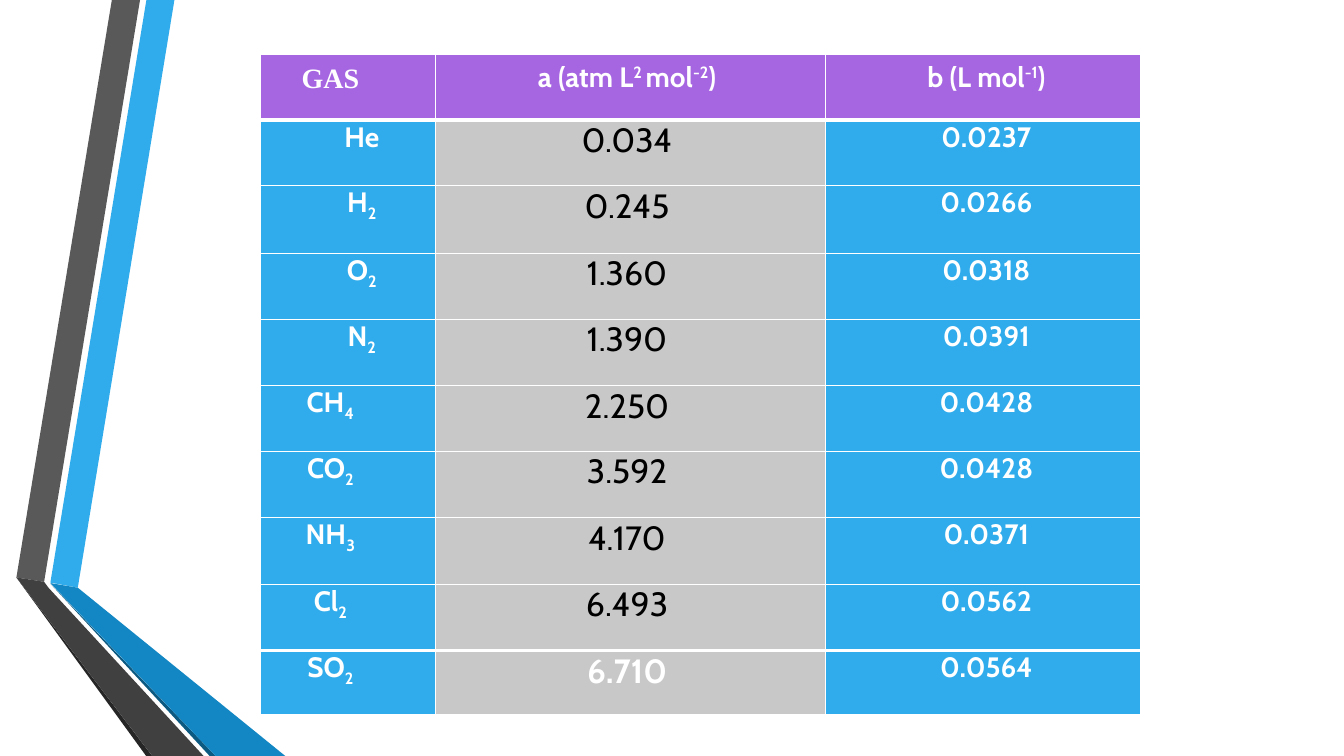
from lxml import etree
from pptx import Presentation
from pptx.dml.color import RGBColor
from pptx.enum.text import MSO_ANCHOR, PP_ALIGN
from pptx.oxml.ns import qn
from pptx.util import Pt

CENTER = PP_ALIGN.CENTER
TOP = MSO_ANCHOR.TOP

# Content: each text is a list of (text, baseline shift in percent)
HEADER = [
    [("GAS", 0)],
    [("a (atm L", 0), ("2 ", 30), ("mol", 0), ("-2", 30), (")", 0)],
    [("b (L mol", 0), ("-1", 30), (")", 0)],
]
GASES = [  # element letters, subscript, a, b
    ("He", "", "0.034", "0.0237"),
    ("H", "2", "0.245", "0.0266"),
    ("O", "2", "1.360", "0.0318"),
    ("N", "2", "1.390", "0.0391"),
    ("CH", "4", "2.250", "0.0428"),
    ("CO", "2", "3.592", "0.0428"),
    ("NH", "3", "4.170", "0.0371"),
    ("Cl", "2", "6.493", "0.0562"),
    ("SO", "2", "6.710", "0.0564"),
]
RIBBONS = [  # colour, corners in points
    ("30ACEC", [(36, 416.2), (55.6, 419.8), (124.6, 0), (104.6, 0)]),
    ("595959", [(100, 0), (79.9, 0), (11.7, 412.5), (31.5, 415.6)]),
    ("262626", [(11.7, 412.5), (104.4, 540), (108.7, 540)]),
    ("0C5A82", [(36, 416.9), (149.8, 540), (154.1, 540)]),
    ("1287C3", [(36, 416.5), (154.1, 540), (203.8, 540), (55.6, 419.8)]),
    ("404040", [(145.4, 540), (34.6, 419.8), (31.5, 415.6), (11.7, 412.5), (108.7, 540)]),
]

# Table layout in points
TABLE_LEFT, TABLE_TOP = 185.8, 39
COLUMN_WIDTHS = [125.3, 278.6, 225.4]
ROW_HEIGHTS = [46.8, 46.8, 48.2, 47.2, 47.5, 46.8, 47.5, 47.5, 47.5, 45.4]
GAS_MARGINS_WIDE, GAS_MARGINS_SHORT = (0, 25), (20, 0)
VALUE_MARGINS = [(24.5, 29.5), (28.8, 24.5)]
SHORT_ROWS = range(1, 5)
LAST_ROW = len(GASES)
HEADER_TOP, HEADER_LINE = 14.6, 13.7
THIN, THICK = 1, 3
WHITE, BLACK, PURPLE, BLUE, GREY = "FFFFFF", "000000", "A666E1", "30ACEC", "C8C8C8"


def color(value):
    return RGBColor.from_string(value)


def draw_ribbon(slide, fill, corners):
    points = [(Pt(x), Pt(y)) for x, y in corners]
    builder = slide.shapes.build_freeform(*points[0], scale=1.0)
    builder.add_line_segments(points[1:], close=True)
    shape = builder.convert_to_shape()
    shape.shadow.inherit = False
    shape.fill.solid()
    shape.fill.fore_color.rgb = color(fill)
    shape.line.fill.background()


def set_borders(cell, row):
    widths = {
        "lnL": THIN,
        "lnR": THIN,
        "lnT": THICK if row in (1, LAST_ROW) else THIN,
        "lnB": THICK if row in (0, LAST_ROW - 1) else THIN,
    }
    properties = cell._tc.get_or_add_tcPr()
    for tag, width in widths.items():
        line = etree.SubElement(properties, qn("a:" + tag), w=str(Pt(width)))
        fill = etree.SubElement(line, qn("a:solidFill"))
        etree.SubElement(fill, qn("a:srgbClr"), val=WHITE)


def fill_cell(cell, row, column, parts):
    header = row == 0
    middle = column == 1 and not header
    plain = middle and row != LAST_ROW

    # Frame and background
    set_borders(cell, row)
    cell.fill.solid()
    cell.fill.fore_color.rgb = color(PURPLE if header else GREY if middle else BLUE)
    if column:
        left, right = VALUE_MARGINS[column - 1]
    else:
        left, right = GAS_MARGINS_SHORT if row in SHORT_ROWS else GAS_MARGINS_WIDE
    cell.margin_left, cell.margin_right = Pt(left), Pt(right)
    cell.margin_top, cell.margin_bottom = Pt(HEADER_TOP if header else 0), Pt(0)
    cell.vertical_anchor = TOP

    # Text
    paragraph = cell.text_frame.paragraphs[0]
    paragraph.alignment = CENTER
    if header:
        paragraph.line_spacing = Pt(HEADER_LINE)
    else:
        paragraph.space_before = Pt(0.5)
    font = paragraph.font
    font.name = "Times New Roman" if header and column == 0 else "Cabin"
    font.size = Pt(24 if middle else 20)
    font.bold = not plain
    font.color.rgb = color(BLACK if plain else WHITE)
    for text, shift in parts:
        run = paragraph.add_run()
        run.text = text
        if shift:
            run._r.get_or_add_rPr().set("baseline", str(shift * 1000))


presentation = Presentation()
presentation.slide_width, presentation.slide_height = Pt(960), Pt(540)
slide = presentation.slides.add_slide(presentation.slide_layouts[6])

# Folded ribbons at the left
for ribbon_fill, ribbon_corners in RIBBONS:
    draw_ribbon(slide, ribbon_fill, ribbon_corners)

# Table of gas constants
rows = [HEADER]
for letters, subscript, a, b in GASES:
    formula = [(letters, 0)] + ([(subscript, -25)] if subscript else [])
    rows.append([formula, [(a, 0)], [(b, 0)]])

table = slide.shapes.add_table(
    len(rows), len(COLUMN_WIDTHS), Pt(TABLE_LEFT), Pt(TABLE_TOP),
    Pt(sum(COLUMN_WIDTHS)), Pt(sum(ROW_HEIGHTS)),
).table
table.first_row = table.horz_banding = False
for table_column, width in zip(table.columns, COLUMN_WIDTHS):
    table_column.width = Pt(width)
for table_row, height in zip(table.rows, ROW_HEIGHTS):
    table_row.height = Pt(height)
for row_index, row_parts in enumerate(rows):
    for column_index, cell_parts in enumerate(row_parts):
        fill_cell(table.cell(row_index, column_index), row_index, column_index, cell_parts)

presentation.save("out.pptx")
